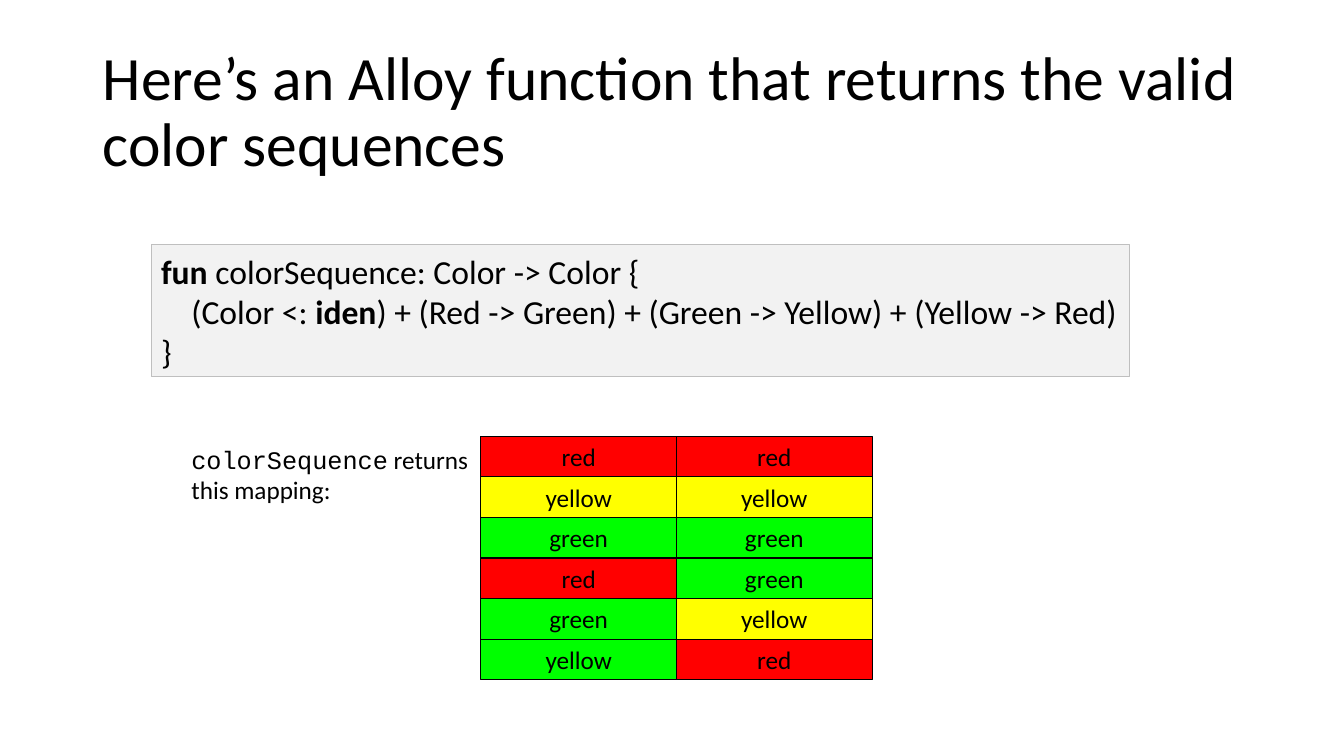
from pptx import Presentation
from pptx.dml.color import RGBColor
from pptx.enum.shapes import MSO_SHAPE as Shape
from pptx.enum.text import MSO_ANCHOR as Anchor, PP_ALIGN as Align
from pptx.util import Inches, Pt

BLACK = RGBColor(0x00, 0x00, 0x00)
RED = RGBColor(0xFF, 0x00, 0x00)
YELLOW = RGBColor(0xFF, 0xFF, 0x00)
GREEN = RGBColor(0x00, 0xFF, 0x00)
CODE_FILL = RGBColor(0xF2, 0xF2, 0xF2)
CODE_LINE = RGBColor(0xBF, 0xBF, 0xBF)


def add_box(left, top, width, height, fill, line):
    box = page.shapes.add_shape(
        Shape.RECTANGLE, Inches(left), Inches(top), Inches(width), Inches(height))
    box.shadow.inherit = False
    box.fill.solid()
    box.fill.fore_color.rgb = fill
    box.line.color.rgb = line
    box.line.width = Pt(0.75)
    return box


def set_font(para, size):
    para.font.name = "Calibri"
    para.font.size = Pt(size)
    para.font.color.rgb = BLACK


deck = Presentation()
deck.slide_width = Inches(13.33)
deck.slide_height = Inches(7.5)
page = deck.slides.add_slide(deck.slide_layouts[6])

# Title
title = page.shapes.add_textbox(Inches(0.92), Inches(0.4), Inches(11.5), Inches(1.45))
title.text_frame.word_wrap = True
title.text_frame.vertical_anchor = Anchor.MIDDLE
para = title.text_frame.paragraphs[0]
para.text = "Here’s an Alloy function that returns the valid color sequences"
para.line_spacing = 0.9
set_font(para, 44)

# Alloy function: each line is an indent in inches and its (text, bold) spans
code_lines = [
    (0, [("fun", True), (" colorSequence: Color -> Color {", False)]),
    (0.3, [("(Color <: ", False), ("iden", True),
           (") + (Red -> Green) + (Green -> Yellow) + (Yellow -> Red)", False)]),
    (0, [("}", False)]),
]
code_box = add_box(1.5, 2.43, 9.7, 1.31, CODE_FILL, CODE_LINE)
code_frame = code_box.text_frame
for number, (indent, spans) in enumerate(code_lines):
    para = code_frame.add_paragraph() if number else code_frame.paragraphs[0]
    para.alignment = Align.LEFT
    para._p.get_or_add_pPr().set("marL", str(Inches(indent)))
    set_font(para, 24)
    for text, bold in spans:
        span = para.add_run()
        span.text = text
        span.font.bold = bold

# Mapping: two columns of (label, fill)
mapping = [
    (("red", RED), ("red", RED)),
    (("yellow", YELLOW), ("yellow", YELLOW)),
    (("green", GREEN), ("green", GREEN)),
    (("red", RED), ("green", GREEN)),
    (("green", GREEN), ("yellow", YELLOW)),
    (("yellow", GREEN), ("red", RED)),
]
cell_width, row_pitch = 1.94, 0.402
for row, pair in enumerate(mapping):
    for column, (label, fill) in enumerate(pair):
        cell = add_box(4.77 + column * cell_width, 4.33 + row * row_pitch,
                       cell_width, row_pitch, fill, BLACK)
        para = cell.text_frame.paragraphs[0]
        para.text = label
        para.alignment = Align.CENTER
        set_font(para, 18)

# Caption beside the mapping
caption = page.shapes.add_textbox(Inches(1.8), Inches(4.36), Inches(2.97), Inches(0.71))
caption.text_frame.word_wrap = True
para = caption.text_frame.paragraphs[0]
set_font(para, 18)
for text, font_name in [("colorSequence", "Courier New"),
                        (" returns this mapping:", "Calibri")]:
    span = para.add_run()
    span.text = text
    span.font.name = font_name

deck.save("out.pptx")
